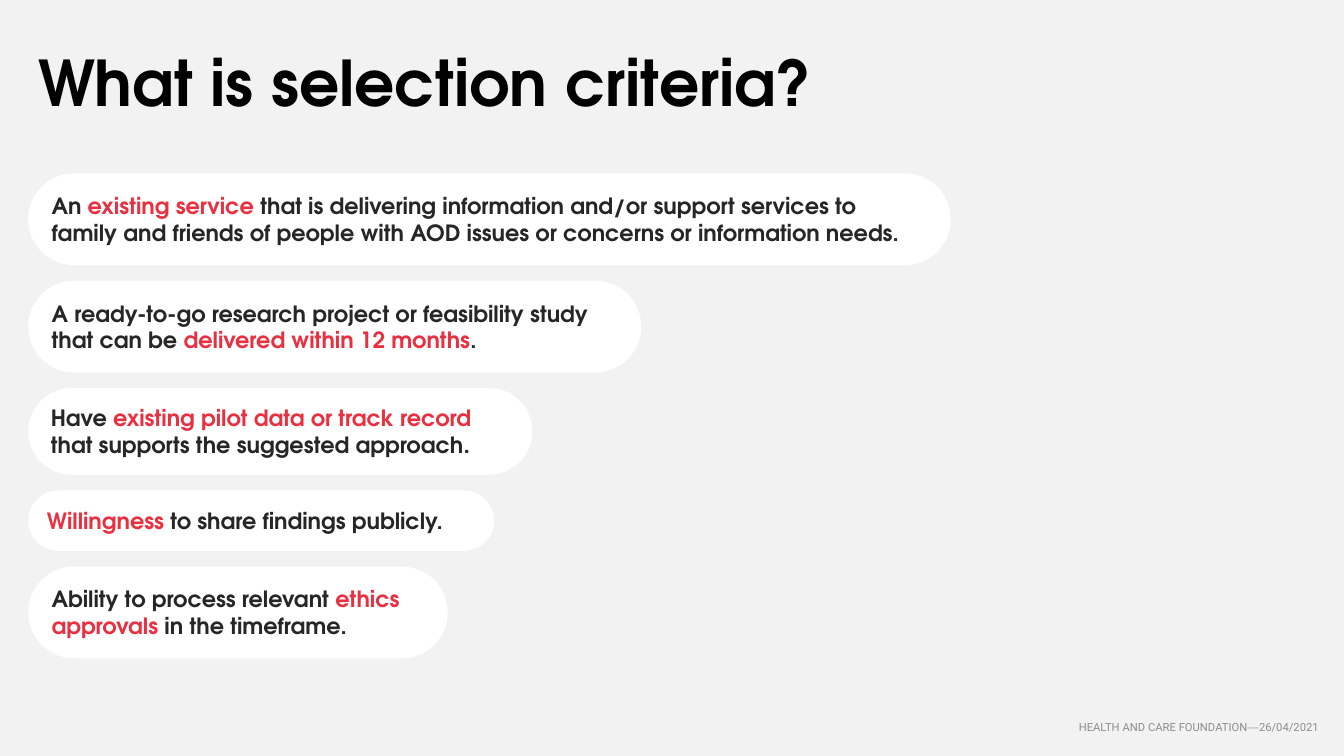
from dataclasses import dataclass

from pptx import Presentation
from pptx.dml.color import RGBColor
from pptx.enum.shapes import MSO_SHAPE
from pptx.enum.text import MSO_ANCHOR, PP_ALIGN
from pptx.util import Inches, Pt

HEADING_FONT = "TeX Gyre Adventor"
INK, RED, WHITE, GREY = "262626", "E83040", "FFFFFF", "8C8C8C"

# Lengths are percentages of the slide's width or height
LEFT = 2.1
STACK_TOP, STACK_BOTTOM = 22.93, 87.07


@dataclass(frozen=True)
class Span:
    text: str
    color: str = INK
    font: str = HEADING_FONT


@dataclass(frozen=True)
class Criterion:
    width: float
    height: float
    spans: tuple[Span, ...]


CRITERIA = (
    Criterion(68.64, 12.13, (
        Span("An "),
        Span("existing service ", RED),
        Span("that is delivering information and/or support services to family and "
             "friends of people with AOD issues or concerns or information needs."),
    )),
    Criterion(45.61, 12.13, (
        Span("A ready-to-go research project or feasibility study that can be "),
        Span("delivered within 12 months", RED),
        Span("."),
    )),
    Criterion(37.51, 11.47, (
        Span("Have "),
        Span("existing pilot data or track record ", RED),
        Span("that supports the suggested approach"),
        Span(".", font="Roboto"),
    )),
    Criterion(34.66, 8, (
        Span("Willingness", RED),
        Span(" to share findings publicly."),
    )),
    Criterion(31.21, 12.13, (
        Span("Ability to process relevant "),
        Span("ethics approvals", RED),
        Span(" in the timeframe."),
    )),
)

FOOTER = (
    Span("HEALTH AND CARE FOUNDATION", GREY, "Roboto"),
    Span("—", GREY, "Montserrat"),
    Span("26/04/2021", GREY, "Roboto"),
)


def rgb(color: str) -> RGBColor:
    return RGBColor.from_string(color)


def place(deck, left: float, top: float, width: float, height: float) -> tuple[int, ...]:
    """Turn percentages of the slide into lengths."""
    return (int(deck.slide_width * left / 100), int(deck.slide_height * top / 100),
            int(deck.slide_width * width / 100), int(deck.slide_height * height / 100))


def write(box, spans: tuple[Span, ...], size: float, bold: bool, anchor, align):
    frame = box.text_frame
    frame.word_wrap = True
    frame.vertical_anchor = anchor
    para = frame.paragraphs[0]
    para.alignment = align
    para.font.size = Pt(size)
    para.font.bold = bold
    for span in spans:
        run = para.add_run()
        run.text = span.text
        run.font.name = span.font
        run.font.color.rgb = rgb(span.color)
    return para


def add_criterion(deck, page, criterion: Criterion, top: float) -> None:
    pill = page.shapes.add_shape(
        MSO_SHAPE.ROUNDED_RECTANGLE,
        *place(deck, LEFT, top, criterion.width, criterion.height))
    pill.adjustments[0] = 0.5
    pill.shadow.inherit = False
    pill.fill.solid()
    pill.fill.fore_color.rgb = rgb(WHITE)
    pill.line.fill.background()
    write(pill, criterion.spans, 16, True, MSO_ANCHOR.MIDDLE, PP_ALIGN.LEFT)


def main() -> None:
    deck = Presentation()
    deck.slide_width, deck.slide_height = Inches(13.33), Inches(7.5)
    page = deck.slides.add_slide(deck.slide_layouts[6])
    page.background.fill.solid()
    page.background.fill.fore_color.rgb = rgb("F2F2F2")

    # Footer
    footer = page.shapes.add_textbox(*place(deck, 69.39, 94.4, 29.48, 3.33))
    write(footer, FOOTER, 8, False, MSO_ANCHOR.BOTTOM, PP_ALIGN.RIGHT)

    # Criteria, stacked with equal gaps
    filled = sum(criterion.height for criterion in CRITERIA)
    gap = (STACK_BOTTOM - STACK_TOP - filled) / (len(CRITERIA) - 1)
    top = STACK_TOP
    for criterion in CRITERIA:
        add_criterion(deck, page, criterion, top)
        top += criterion.height + gap

    # Title
    title = page.shapes.add_textbox(*place(deck, LEFT, 6.27, 64.59, 19.47))
    heading = write(title, (Span("What is selection criteria?", "000000"),),
                    45, True, MSO_ANCHOR.TOP, PP_ALIGN.LEFT)
    heading.line_spacing = 0.9

    deck.save("out.pptx")


if __name__ == "__main__":
    main()
